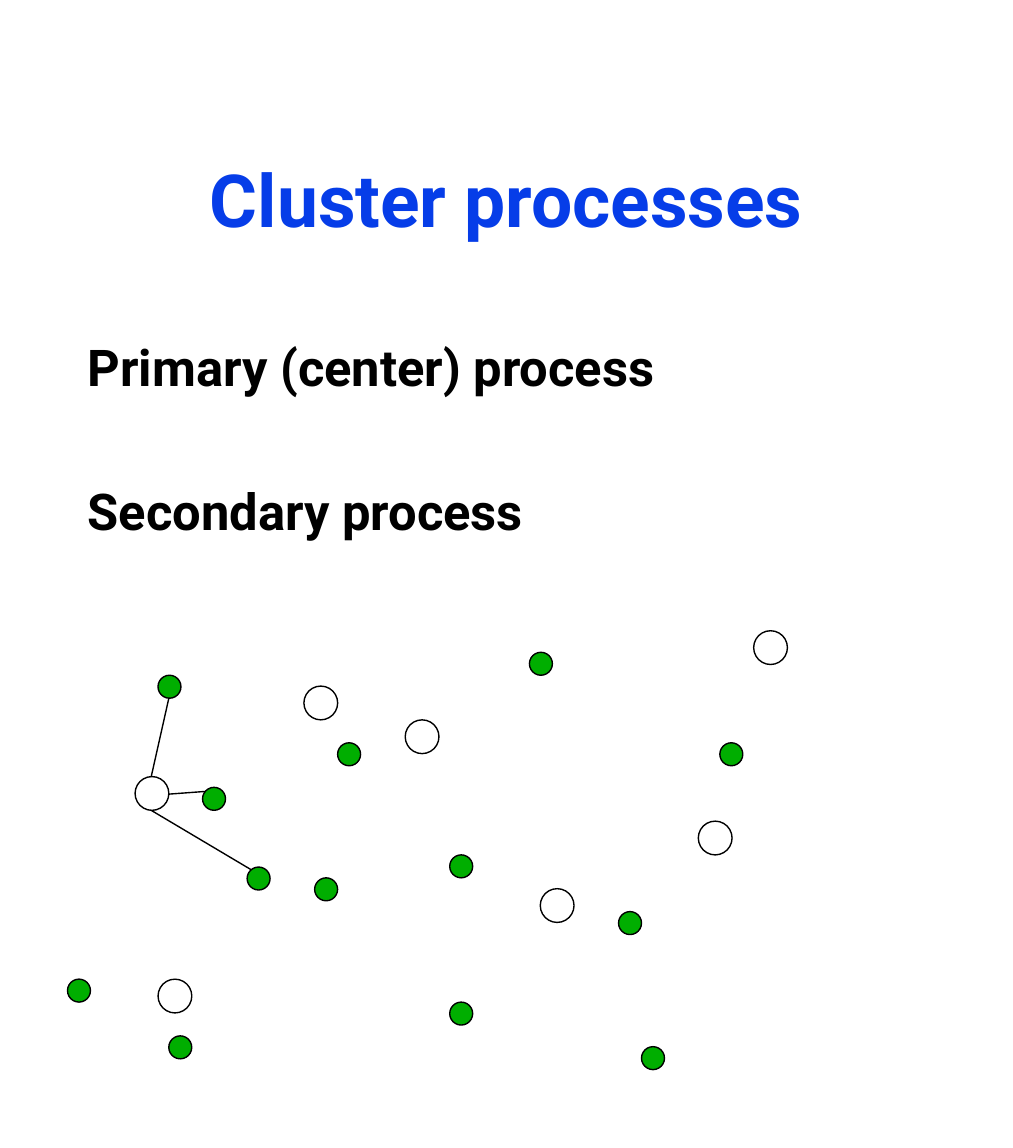
import dataclasses

import pptx
import pptx.dml.color
import pptx.enum.shapes
import pptx.enum.text
import pptx.oxml.ns
import pptx.oxml.xmlchemy
import pptx.shapes.autoshape
import pptx.slide
import pptx.text.text
import pptx.util
from lxml import etree

Inches = pptx.util.Inches
Pt = pptx.util.Pt
COLORS = {"title": "063DE8", "ink": "000000", "center": "FFFFFF", "offspring": "00AE00"}
FONT = "Roboto"
LINE_WIDTH = Pt(0.75)


@dataclasses.dataclass(frozen=True)
class Process:
    color: str
    diameter: float
    positions: tuple[tuple[float, float], ...]


@dataclasses.dataclass(frozen=True)
class Link:
    start: tuple[float, float]
    end: tuple[float, float]


PROCESSES = (
    Process("center", 0.25, (
        (1, 5.75), (4, 6.58), (5.17, 6.08), (2.25, 5.08),
        (1.17, 7.25), (3, 5.33), (5.58, 4.67),
    )),
    Process("offspring", 0.17, (
        (1.17, 5), (2.5, 5.5), (4.58, 6.75), (5.33, 5.5), (1.83, 6.42),
        (0.5, 7.25), (3.33, 7.42), (2.33, 6.5), (4.75, 7.75), (3.33, 6.33),
        (3.92, 4.83), (1.25, 7.67), (1.5, 5.83),
    )),
)
LINKS = (
    Link((1.12, 5.75), (1.25, 5.17)),
    Link((1.25, 5.88), (1.52, 5.86)),
    Link((1.12, 6), (1.86, 6.44)),
)


def rgb(name: str) -> pptx.dml.color.RGBColor:
    return pptx.dml.color.RGBColor.from_string(COLORS[name])


def add_frame(slide: pptx.slide.Slide, top: float, height: float) -> pptx.text.text.TextFrame:
    frame = slide.shapes.add_textbox(
        Inches(0.56), Inches(top), Inches(6.38), Inches(height)
    ).text_frame
    frame.word_wrap = True
    frame.margin_left = frame.margin_right = Inches(0.09)
    frame.margin_top = frame.margin_bottom = Inches(0.04)
    return frame


def write(paragraph: pptx.text.text._Paragraph, text: str, size: float, color: str) -> None:
    run = paragraph.add_run()
    run.text = text
    run.font.name = FONT
    run.font.size = Pt(size)
    run.font.bold = True
    run.font.color.rgb = rgb(color)


def draw_process(slide: pptx.slide.Slide, process: Process) -> None:
    size = Inches(process.diameter)
    for left, top in process.positions:
        point = slide.shapes.add_shape(
            pptx.enum.shapes.MSO_SHAPE.OVAL, Inches(left), Inches(top), size, size
        )
        point.shadow.inherit = False
        point.fill.solid()
        point.fill.fore_color.rgb = rgb(process.color)
        point.line.color.rgb = rgb("ink")
        point.line.width = LINE_WIDTH


def draw_link(slide: pptx.slide.Slide, link: Link) -> None:
    connector = slide.shapes.add_connector(
        pptx.enum.shapes.MSO_CONNECTOR.STRAIGHT,
        *(Inches(value) for value in link.start + link.end),
    )
    connector.line.color.rgb = rgb("ink")
    connector.line.width = LINE_WIDTH
    etree.SubElement(connector._element.spPr, pptx.oxml.ns.qn("a:effectLst"))


def main() -> None:
    deck = pptx.Presentation()
    deck.slide_width = Inches(7.5)
    deck.slide_height = Inches(8.5)
    slide = deck.slides.add_slide(deck.slide_layouts[6])

    title = add_frame(slide, 0.76, 1.41)
    title.vertical_anchor = pptx.enum.text.MSO_ANCHOR.MIDDLE
    title.paragraphs[0].alignment = pptx.enum.text.PP_ALIGN.CENTER
    write(title.paragraphs[0], "Cluster processes", 39, "title")

    body = add_frame(slide, 2.45, 5.09)
    primary = body.paragraphs[0]
    primary.space_before = Pt(2)
    write(primary, "Primary (center) process", 27, "ink")
    secondary = body.add_paragraph()
    secondary.space_before = Pt(44)
    write(secondary, "Secondary process", 27, "ink")

    for process in PROCESSES:
        draw_process(slide, process)
    for link in LINKS:
        draw_link(slide, link)

    deck.save("out.pptx")


if __name__ == "__main__":
    main()
